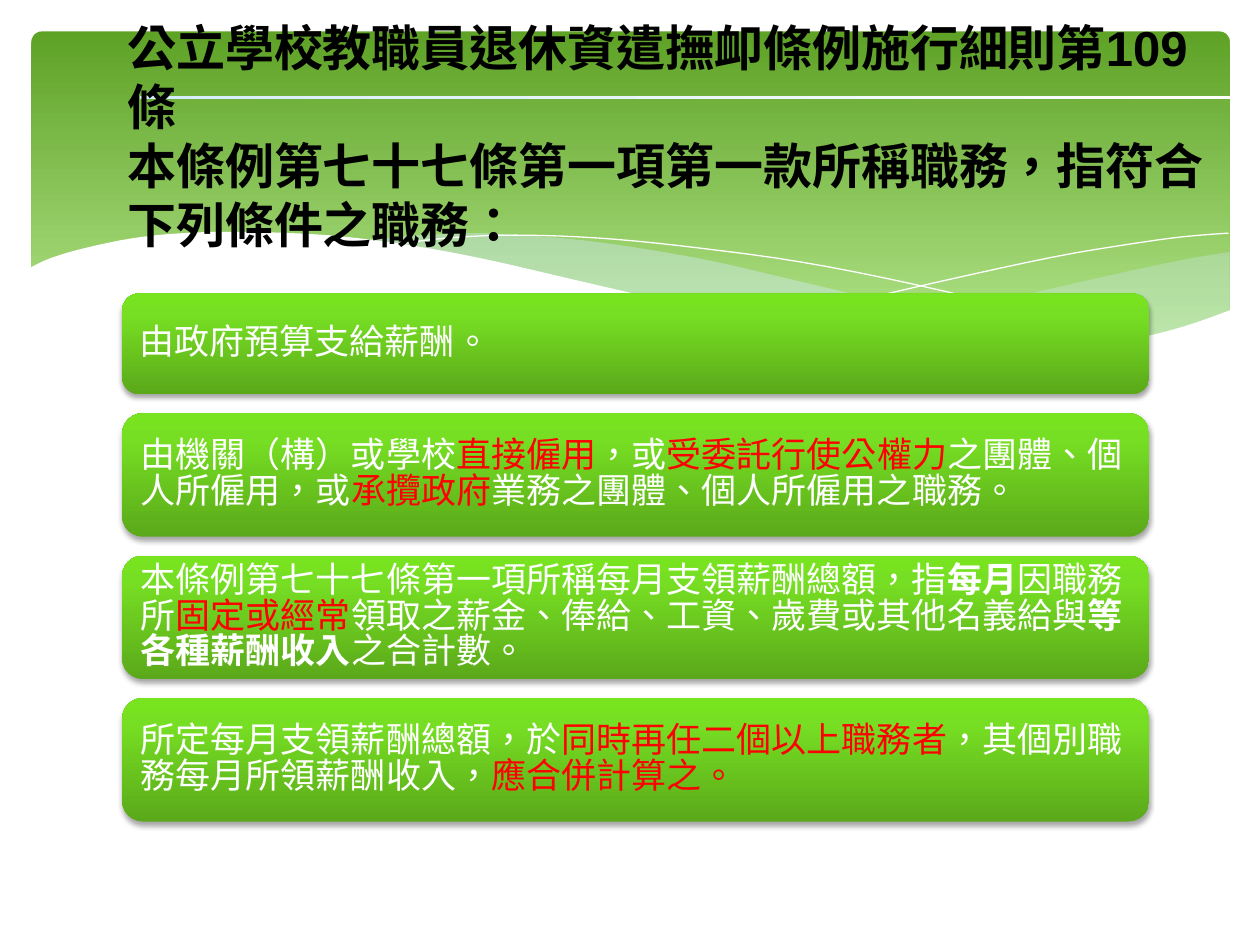
import copy
from dataclasses import dataclass

import lxml.etree
import pptx
import pptx.dml.color
import pptx.enum.dml
import pptx.enum.lang
import pptx.enum.shapes
import pptx.enum.text
import pptx.oxml.ns
import pptx.util

Inches = pptx.util.Inches
Pt = pptx.util.Pt
RGBColor = pptx.dml.color.RGBColor
SHAPE = pptx.enum.shapes.MSO_SHAPE
ANCHOR = pptx.enum.text.MSO_ANCHOR
LEFT = pptx.enum.text.PP_ALIGN.LEFT
LANG = pptx.enum.lang.MSO_LANGUAGE_ID.TRADITIONAL_CHINESE
qn = pptx.oxml.ns.qn

WHITE = RGBColor(0xFF, 0xFF, 0xFF)
BLACK = RGBColor(0, 0, 0)
RED = RGBColor(0xFF, 0, 0)
ICE = RGBColor(0xD6, 0xEC, 0xFF)
BAND = [(0, RGBColor(0x5E, 0xA2, 0x26)), (0.9, RGBColor(0xB1, 0xE3, 0x88))]
RULE = [(0, ICE), (1, WHITE)]
GREEN = [(0, RGBColor(0x5B, 0xA9, 0x1A)), (0.8, RGBColor(0x77, 0xDF, 0x23)),
         (1, RGBColor(0x78, 0xE4, 0x1F))]

Point = tuple[float, float]


@dataclass
class Span:
    text: str
    color: RGBColor = WHITE
    bold: bool = False


@dataclass
class Card:
    height: float
    spans: list[Span]


@dataclass
class Wave:
    """Edges are smooth curves; joined in turn they form the outline."""
    edges: list[list[Point]]
    fill: RGBColor | None = None
    alpha: int = 100


WAVES = [
    Wave([[(9.76, 2), (9.35, 2.07), (8.61, 2.23), (7.79, 2.42), (7.06, 2.57), (6.61, 2.65)],
          [(6.61, 2.65), (7.19, 2.72), (7.69, 2.77), (8.14, 2.78), (8.63, 2.75),
           (9.05, 2.69), (9.42, 2.59), (9.76, 2.47)]], ICE, 29),
    Wave([[(8.93, 2.73), (8.37, 2.65), (7.75, 2.54), (7.06, 2.4), (6.29, 2.22),
           (5.69, 2.08), (5.14, 1.98), (4.65, 1.91), (4.2, 1.87), (3.8, 1.85),
           (3.28, 1.87), (2.86, 1.91)],
          [(2.86, 1.91), (3.42, 1.99), (4.04, 2.11), (4.49, 2.22), (5.3, 2.4),
           (6.01, 2.55), (6.65, 2.66), (7.22, 2.74), (7.73, 2.77), (8.18, 2.78),
           (8.57, 2.77), (8.93, 2.73)]], ICE, 40),
    Wave([[(3.09, 1.95), (3.44, 1.9), (3.87, 1.87), (4.33, 1.87), (4.89, 1.9),
           (5.56, 1.97), (6.36, 2.08), (7.27, 2.26), (8.31, 2.51), (9.07, 2.72)]]),
    Wave([[(6.13, 2.57), (6.72, 2.41), (7.48, 2.23), (8.36, 2.04), (8.95, 1.94),
           (9.38, 1.88), (9.75, 1.85)]]),
    Wave([[(9.77, 2.46), (9.4, 2.59), (8.99, 2.69), (8.5, 2.75), (8.09, 2.77),
           (7.61, 2.75), (7.08, 2.7), (6.48, 2.62), (5.79, 2.5), (5.03, 2.33),
           (4.47, 2.2), (3.91, 2.07), (3.4, 1.97), (2.92, 1.9), (2.5, 1.86),
           (1.93, 1.84), (1.46, 1.85), (1.06, 1.89), (0.67, 1.97), (0.4, 2.05),
           (0.23, 2.13)], [(0.23, 3.29), (9.77, 3.29)]], WHITE),
]

CARDS = [
    Card(0.8, [Span("由政府預算支給薪酬。")]),
    Card(0.98, [Span("由機關（構）或學校"), Span("直接僱用", RED), Span("，或"),
                Span("受委託行使公權力", RED), Span("之團體、個人所僱用，或"),
                Span("承攬政府", RED), Span("業務之團體、個人所僱用之職務。")]),
    Card(0.98, [Span("本條例第七十七條第一項所稱每月支領薪酬總額，指"),
                Span("每月", bold=True), Span("因職務所"), Span("固定或經常", RED),
                Span("領取之薪金、俸給、工資、歲費或其他名義給與"),
                Span("等各種薪酬收入", bold=True), Span("之合計數。")]),
    Card(0.98, [Span("所定每月支領薪酬總額，於"), Span("同時再任二個以上職務者", RED),
                Span("，其個別職務每月所領薪酬收入，"), Span("應合併計算之。", RED)]),
]
TITLE = ["公立學校教職員退休資遣撫卹條例施行細則第109條",
         "本條例第七十七條第一項第一款所稱職務，指符合下列條件之職務："]


def smooth(knots: list[Point], steps: int = 4) -> list[Point]:
    """Catmull-Rom curve through the knots."""
    if len(knots) < 3:
        return knots
    ends = [knots[0], *knots, knots[-1]]
    curve = [knots[0]]
    for a, b, c, d in zip(ends, ends[1:], ends[2:], ends[3:]):
        for step in range(1, steps + 1):
            t = step / steps
            curve.append(tuple(
                q + t / 2 * (r - p + t * (2 * p - 5 * q + 4 * r - s
                                          + t * (3 * q - p - 3 * r + s)))
                for p, q, r, s in zip(a, b, c, d)))
    return curve


def cast(effects, blur: float, drop: float, alpha: int) -> None:
    """Add a downward black shadow to an effect list."""
    shade = lxml.etree.SubElement(
        effects, qn("a:outerShdw"), blurRad=str(Pt(blur)), dist=str(Pt(drop)),
        dir="5400000", algn="t", rotWithShape="0")
    color = lxml.etree.SubElement(shade, qn("a:srgbClr"), val=str(BLACK))
    lxml.etree.SubElement(color, qn("a:alpha"), val=str(alpha * 1000))


def add_block(shapes, kind, box: tuple, stops: list, angle: float):
    """Shape with a gradient; the angle runs counter-clockwise."""
    block = shapes.add_shape(kind, *map(Inches, box))
    block.shadow.inherit = False
    block.line.fill.background()
    block.fill.gradient()
    block.fill.gradient_angle = angle
    marks = block._element.spPr.find(".//" + qn("a:gsLst"))
    while len(marks) < len(stops):
        marks.append(copy.deepcopy(marks[-1]))
    for mark, (place, color) in zip(block.fill.gradient_stops, stops):
        mark.position = place
        mark.color.rgb = color
    return block


def add_wave(shapes, wave: Wave) -> None:
    points = [(Inches(x), Inches(y)) for edge in wave.edges for x, y in smooth(edge)]
    pen = shapes.build_freeform(*points[0])
    pen.add_line_segments(points[1:], close=wave.fill is not None)
    shape = pen.convert_to_shape()
    shape.shadow.inherit = False
    if wave.fill is None:
        shape.fill.background()
        shape.line.color.rgb = WHITE
        shape.line.width = Pt(0.75)
        return
    shape.line.fill.background()
    shape.fill.solid()
    shape.fill.fore_color.rgb = wave.fill
    if wave.alpha < 100:
        color = shape._element.spPr.find(qn("a:solidFill"))[0]
        lxml.etree.SubElement(color, qn("a:alpha"), val=str(wave.alpha * 1000))


def add_run(para, span: Span, face: str, size: float):
    run = para.add_run()
    run.text = span.text
    font = run.font
    font.name, font.size, font.bold = face, Pt(size), span.bold
    font.color.rgb = span.color
    font.language_id = LANG
    return run


def add_card(shapes, card: Card, top: float) -> None:
    block = add_block(shapes, SHAPE.ROUNDED_RECTANGLE, (0.97, top, 8.15, card.height), GREEN, 90)
    cast(block._element.spPr.find(qn("a:effectLst")), 3.1, 1.8, 35)
    frame = block.text_frame
    frame.word_wrap = True
    frame.vertical_anchor = ANCHOR.MIDDLE
    para = frame.paragraphs[0]
    para.alignment = LEFT
    para.line_spacing = 0.85
    for span in card.spans:
        add_run(para, span, "Roboto", 20)


def set_title(shapes) -> None:
    title = shapes.title
    shapes._spTree.append(title._element)  # bring in front of the band
    title.left, title.top, title.width, title.height = map(Inches, (0.91, 0.13, 9, 1.89))
    frame = title.text_frame
    frame.word_wrap = True
    frame.auto_size = pptx.enum.text.MSO_AUTO_SIZE.NONE
    frame.vertical_anchor = ANCHOR.MIDDLE
    para = frame.paragraphs[0]
    para.alignment = LEFT
    for row, text in enumerate(TITLE):
        if row:
            para.add_line_break()
        run = add_run(para, Span(text, BLACK, True), "Arial", 28)
        fill = run._r.rPr.find(qn("a:solidFill"))
        effects = pptx.oxml.xmlchemy.OxmlElement("a:effectLst")
        fill.addnext(effects)
        cast(effects, 3, 3, 40)


def main() -> None:
    deck = pptx.Presentation()
    deck.slide_width, deck.slide_height = Inches(10), Inches(7.5)
    shapes = deck.slides.add_slide(deck.slide_layouts[5]).shapes
    band = add_block(shapes, SHAPE.ROUNDED_RECTANGLE, (0.25, 0.25, 9.51, 2.7), BAND, 270)
    band.adjustments[0] = 0.03
    for wave in WAVES:
        add_wave(shapes, wave)
    add_block(shapes, SHAPE.RECTANGLE, (1.11, 0.76, 8.77, 0.03), RULE, 0)
    set_title(shapes)
    top = 2.33
    for card in CARDS:
        add_card(shapes, card, top)
        top += card.height + 0.15
    deck.save("out.pptx")


if __name__ == "__main__":
    main()
